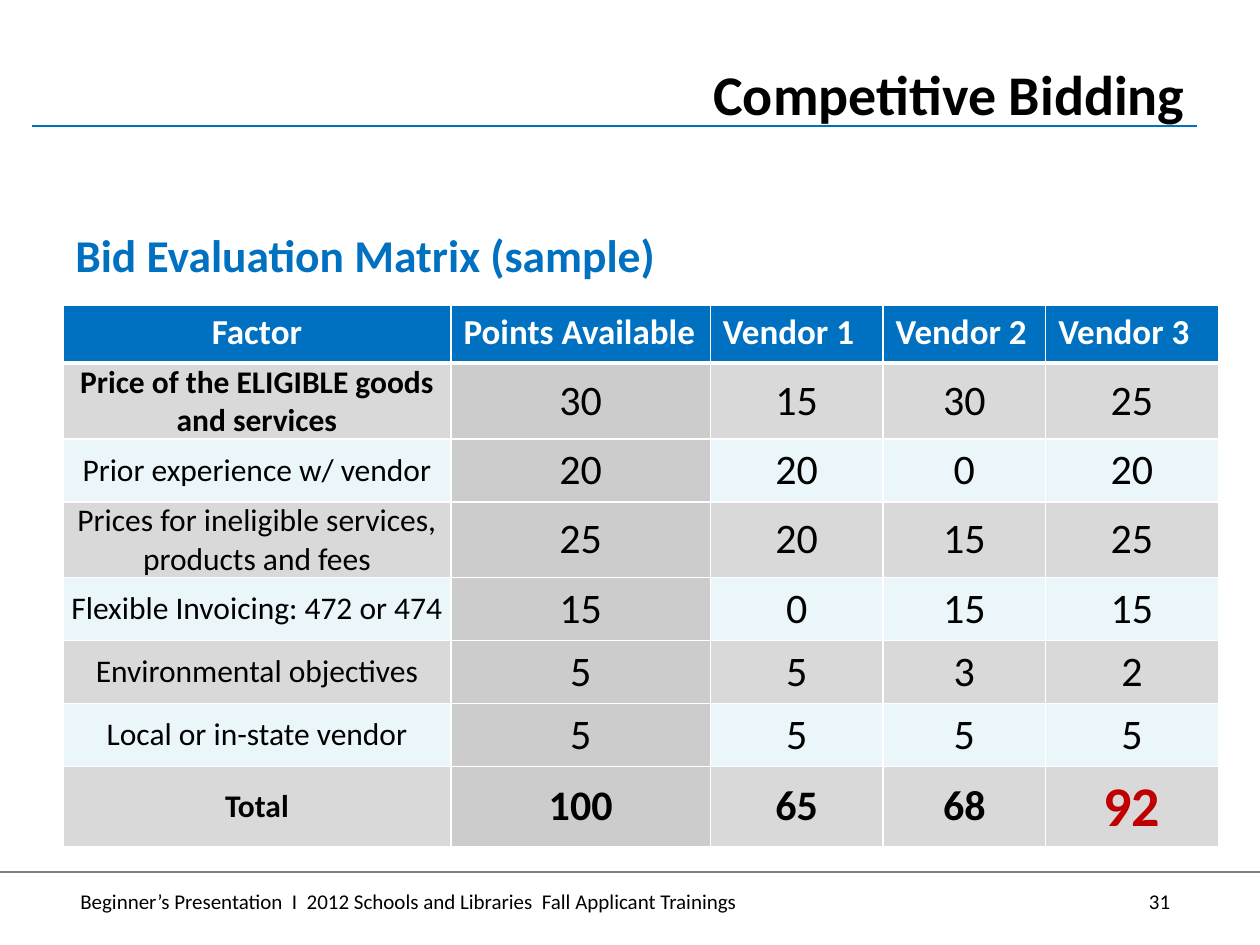
from dataclasses import dataclass

from lxml import etree
from pptx import Presentation
from pptx.dml.color import RGBColor
from pptx.enum import shapes, text
from pptx.oxml import ns
from pptx.util import Cm, Pt


@dataclass(frozen=True)
class Theme:
    font: str = "Calibri"
    blue: str = "0070C0"
    black: str = "000000"
    white: str = "FFFFFF"
    red: str = "C00000"
    rule_grey: str = "808080"
    band_grey: str = "D9D9D9"
    band_blue: str = "EAF6FA"
    points_grey: str = "CCCCCC"
    title: int = 32
    subtitle: int = 26
    header: int = 20
    factor: int = 18
    score: int = 24
    footer: int = 12


THEME = Theme()


@dataclass(frozen=True)
class Style:
    size: int
    color: str = THEME.black
    bold: bool = False
    align: text.PP_ALIGN = text.PP_ALIGN.LEFT


@dataclass(frozen=True)
class Label:
    words: str
    left: float
    top: float
    width: float
    height: float
    style: Style
    right_tab: float = 0


@dataclass(frozen=True)
class Rule:
    left: float
    right: float
    y: float
    color: str
    weight: float


@dataclass(frozen=True)
class Factor:
    name: str
    scores: tuple[int, ...]
    bold_name: bool = False
    bold_scores: bool = False


RULES = (
    Rule(0, 25.4, 17.58, THEME.rule_grey, 0.75),
    Rule(0.64, 24.13, 2.54, THEME.blue, 1.25),
)
LABELS = (
    Label("Beginner’s Presentation  I  2012 Schools and Libraries  Fall Applicant Trainings\t31",
          1.37, 17.78, 22.76, 0.86, Style(THEME.footer), right_tab=21.97),
    Label("Bid Evaluation Matrix (sample)", 1.27, 4.45, 22.86, 1.7,
          Style(THEME.subtitle, THEME.blue, True)),
    Label("Competitive Bidding", 6.99, 1.07, 17.15, 1.47,
          Style(THEME.title, bold=True, align=text.PP_ALIGN.RIGHT)),
)
HEADINGS = ("Factor", "Points Available", "Vendor 1", "Vendor 2", "Vendor 3")
COLUMN_WIDTHS = (7.82, 5.23, 3.48, 3.28, 3.48)
ROW_HEIGHT = 1.17
FACTORS = (
    Factor("Price of the ELIGIBLE goods and services", (30, 15, 30, 25), bold_name=True),
    Factor("Prior experience w/ vendor", (20, 20, 0, 20)),
    Factor("Prices for ineligible services, products and fees", (25, 20, 15, 25)),
    Factor("Flexible Invoicing: 472 or 474", (15, 0, 15, 15)),
    Factor("Environmental objectives", (5, 5, 3, 2)),
    Factor("Local or in-state vendor", (5, 5, 5, 5)),
    Factor("Total", (100, 65, 68, 92), bold_name=True, bold_scores=True),
)


def write(paragraph, words: str, style: Style) -> None:
    paragraph.alignment = style.align
    run = paragraph.add_run()
    run.text = words
    run.font.name = THEME.font
    run.font.size = Pt(style.size)
    run.font.bold = style.bold
    run.font.color.rgb = RGBColor.from_string(style.color)


def add_label(slide, label: Label) -> None:
    box = slide.shapes.add_textbox(Cm(label.left), Cm(label.top), Cm(label.width), Cm(label.height))
    box.text_frame.word_wrap = True
    paragraph = box.text_frame.paragraphs[0]
    if label.right_tab:
        properties = paragraph._p.get_or_add_pPr()
        tabs = etree.SubElement(properties, ns.qn("a:tabLst"))
        etree.SubElement(tabs, ns.qn("a:tab"), pos=str(Cm(label.right_tab)), algn="r")
    write(paragraph, label.words, label.style)


def add_rule(slide, rule: Rule) -> None:
    line = slide.shapes.add_connector(
        shapes.MSO_CONNECTOR.STRAIGHT, Cm(rule.left), Cm(rule.y), Cm(rule.right), Cm(rule.y))
    line.line.color.rgb = RGBColor.from_string(rule.color)
    line.line.width = Pt(rule.weight)
    etree.SubElement(line._element.spPr, ns.qn("a:effectLst"))


def set_borders(cell, top: float = 1, bottom: float = 1) -> None:
    """Draw white cell borders; they must precede the fill in the XML."""
    properties = cell._tc.get_or_add_tcPr()
    weights = {"lnL": 1, "lnR": 1, "lnT": top, "lnB": bottom}
    for index, (side, weight) in enumerate(weights.items()):
        border = etree.Element(ns.qn(f"a:{side}"), w=str(Pt(weight)))
        fill = etree.SubElement(border, ns.qn("a:solidFill"))
        etree.SubElement(fill, ns.qn("a:srgbClr"), val=THEME.white)
        properties.insert(index, border)


def fill_cell(cell, words: str, style: Style, fill: str) -> None:
    cell.fill.solid()
    cell.fill.fore_color.rgb = RGBColor.from_string(fill)
    write(cell.text_frame.paragraphs[0], words, style)


def score_style(factor: Factor, column: int) -> Style:
    center = text.PP_ALIGN.CENTER
    if column == 0:
        return Style(THEME.factor, bold=factor.bold_name, align=center)
    if factor.bold_scores and factor.scores[column - 1] == max(factor.scores[1:]):
        return Style(THEME.title, THEME.red, True, center)
    return Style(THEME.score, bold=factor.bold_scores, align=center)


def add_matrix(slide) -> None:
    frame = slide.shapes.add_table(len(FACTORS) + 1, len(HEADINGS),
                                   Cm(1.27), Cm(6.15), Cm(sum(COLUMN_WIDTHS)), Cm(10.92))
    table = frame.table
    for column, width in zip(table.columns, COLUMN_WIDTHS):
        column.width = Cm(width)
    for row in table.rows:
        row.height = Cm(ROW_HEIGHT)
    frame.height = Cm(10.92)

    for column, heading in enumerate(HEADINGS):
        align = text.PP_ALIGN.LEFT if column else text.PP_ALIGN.CENTER
        cell = table.cell(0, column)
        fill_cell(cell, heading, Style(THEME.header, THEME.white, True, align), THEME.blue)
        set_borders(cell, bottom=3)

    for row, factor in enumerate(FACTORS, start=1):
        band = THEME.band_grey if row % 2 else THEME.band_blue
        for column, value in enumerate((factor.name, *factor.scores)):
            cell = table.cell(row, column)
            cell.vertical_anchor = text.MSO_ANCHOR.MIDDLE
            if column < 2:
                cell.margin_left = cell.margin_right = cell.margin_top = cell.margin_bottom = Cm(0)
            fill = THEME.points_grey if column == 1 else band
            fill_cell(cell, str(value), score_style(factor, column), fill)
            set_borders(cell, top=3 if row == 1 else 1)


def main() -> None:
    presentation = Presentation()
    presentation.slide_width = Cm(25.4)
    presentation.slide_height = Cm(19.05)
    slide = presentation.slides.add_slide(presentation.slide_layouts[6])
    for rule in RULES:
        add_rule(slide, rule)
    for label in LABELS:
        add_label(slide, label)
    add_matrix(slide)
    presentation.save("out.pptx")


if __name__ == "__main__":
    main()
